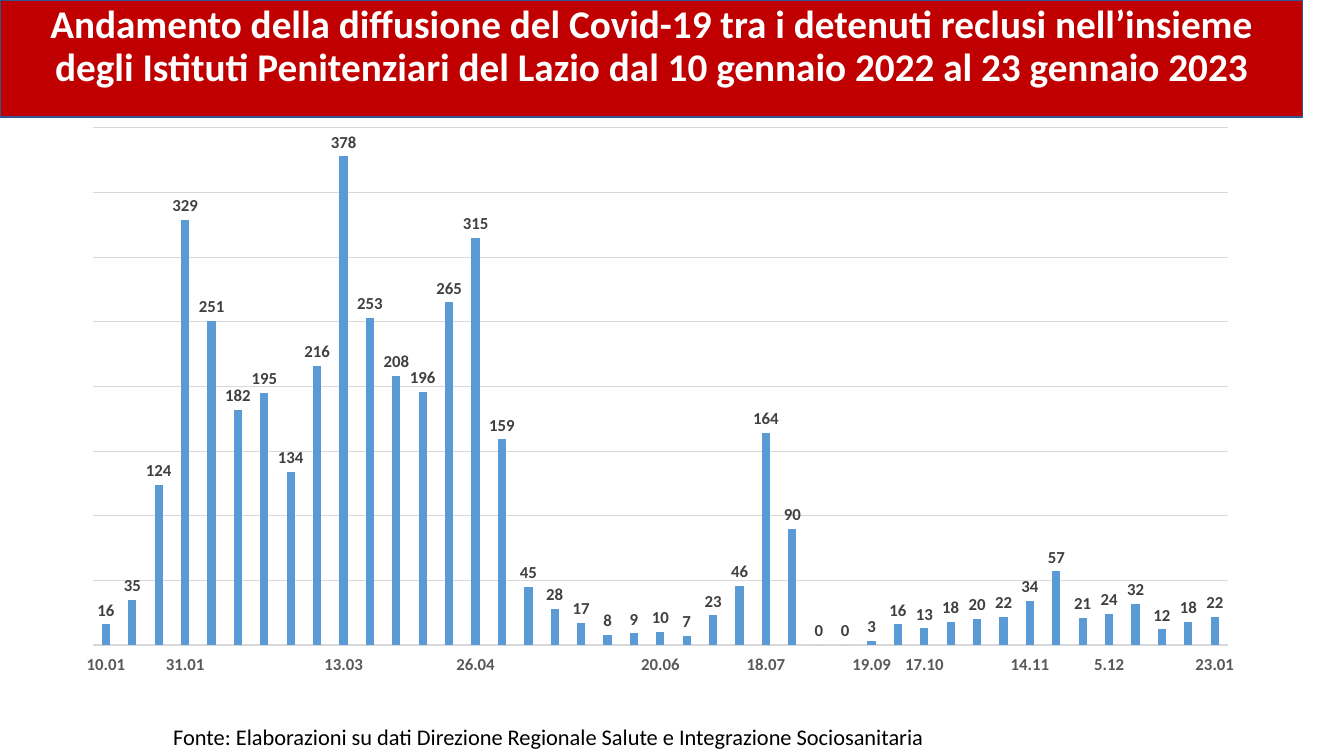
from dataclasses import dataclass

from lxml import etree
from pptx import Presentation
from pptx.chart.data import CategoryChartData
from pptx.dml.color import RGBColor
from pptx.enum.chart import XL_CHART_TYPE, XL_LABEL_POSITION, XL_TICK_LABEL_POSITION, XL_TICK_MARK
from pptx.enum.shapes import MSO_SHAPE
from pptx.enum.text import MSO_ANCHOR, MSO_AUTO_SIZE, PP_ALIGN
from pptx.oxml.ns import qn
from pptx.util import Inches, Pt

COLUMNS = XL_CHART_TYPE.COLUMN_CLUSTERED
OUTSIDE_END = XL_LABEL_POSITION.OUTSIDE_END
LABELS_LOW = XL_TICK_LABEL_POSITION.LOW
NO_TICK = XL_TICK_MARK.NONE
FONT = "Calibri"
GRID_COLOR = "D9D9D9"

TITLE = ("Andamento della diffusione del Covid-19 tra i detenuti reclusi nell’insieme "
         "degli Istituti Penitenziari del Lazio dal 10 gennaio 2022 al 23 gennaio 2023")
SOURCE = "Fonte: Elaborazioni su dati Direzione Regionale Salute e Integrazione Sociosanitaria"
CASES = [16, 35, 124, 329, 251, 182, 195, 134, 216, 378, 253, 208, 196, 265, 315,
         159, 45, 28, 17, 8, 9, 10, 7, 23, 46, 164, 90, 0, 0, 3, 16, 13, 18, 20, 22,
         34, 57, 21, 24, 32, 12, 18, 22]
# Only some surveys carry a date: position in CASES -> label
DATES = {0: "10.01", 3: "31.01", 9: "13.03", 14: "26.04", 21: "20.06", 25: "18.07",
         29: "19.09", 31: "17.10", 35: "14.11", 38: "5.12", 42: "23.01"}


@dataclass
class Box:
    left: float
    top: float
    width: float
    height: float

    def lengths(self) -> tuple:
        return tuple(Inches(n) for n in (self.left, self.top, self.width, self.height))


@dataclass
class TextStyle:
    size: float
    color: str
    bold: bool = False


TITLE_BOX = Box(0, 0, 12.92, 1.16)
CHART_BOX = Box(0.62, 1.16, 11.86, 5.59)
PLOT_BOX = Box(0.92, 1.27, 11.26, 5.13)
SOURCE_BOX = Box(1.62, 7.13, 7.84, 0.37)


def rgb(color: str) -> RGBColor:
    return RGBColor.from_string(color)


def style_font(font, style: TextStyle) -> None:
    font.name = FONT
    font.size = Pt(style.size)
    font.bold = style.bold
    font.color.rgb = rgb(style.color)


def style_line(line, color: str, width: float) -> None:
    line.color.rgb = rgb(color)
    line.width = Pt(width)


def add_run(paragraph, text: str, style: TextStyle) -> None:
    run = paragraph.add_run()
    run.text = text
    style_font(run.font, style)


def add_title(slide) -> None:
    shape = slide.shapes.add_shape(MSO_SHAPE.RECTANGLE, *TITLE_BOX.lengths())
    shape.shadow.inherit = False
    shape.fill.solid()
    shape.fill.fore_color.rgb = rgb("C00000")
    style_line(shape.line, "325491", 1)
    shape.text_frame.word_wrap = True
    shape.text_frame.vertical_anchor = MSO_ANCHOR.TOP
    paragraph = shape.text_frame.paragraphs[0]
    paragraph.alignment = PP_ALIGN.CENTER
    paragraph.line_spacing = 0.9
    add_run(paragraph, TITLE, TextStyle(28, "FFFFFF", True))


def add_source(slide) -> None:
    text_frame = slide.shapes.add_textbox(*SOURCE_BOX.lengths()).text_frame
    text_frame.word_wrap = False
    text_frame.auto_size = MSO_AUTO_SIZE.SHAPE_TO_FIT_TEXT
    add_run(text_frame.paragraphs[0], SOURCE, TextStyle(16, "000000"))


def place_plot(chart) -> None:
    """Fix the inner plot area as fractions of the chart frame."""
    plot_area = chart.plots[0]._element.getparent()
    for old_layout in plot_area.findall(qn("c:layout")):
        plot_area.remove(old_layout)
    layout = etree.Element(qn("c:layout"))
    manual = etree.SubElement(layout, qn("c:manualLayout"))
    settings = {
        "layoutTarget": "inner", "xMode": "edge", "yMode": "edge",
        "x": (PLOT_BOX.left - CHART_BOX.left) / CHART_BOX.width,
        "y": (PLOT_BOX.top - CHART_BOX.top) / CHART_BOX.height,
        "w": PLOT_BOX.width / CHART_BOX.width,
        "h": PLOT_BOX.height / CHART_BOX.height,
    }
    for name, value in settings.items():
        etree.SubElement(manual, qn(f"c:{name}")).set("val", str(value))
    plot_area.insert(0, layout)


def style_axes(chart) -> None:
    dates = chart.category_axis
    dates.major_tick_mark = dates.minor_tick_mark = NO_TICK
    dates.tick_label_position = LABELS_LOW
    style_line(dates.format.line, GRID_COLOR, 0.75)
    style_font(dates.tick_labels.font, TextStyle(12, "595959", True))
    # Show every label, horizontally
    axis = dates._element
    axis.find(f"{qn('c:txPr')}/{qn('a:bodyPr')}").set("rot", "-60000000")
    skip = etree.Element(qn("c:tickLblSkip"))
    skip.set("val", "1")
    axis.find(qn("c:noMultiLvlLbl")).addprevious(skip)

    counts = chart.value_axis
    counts.visible = False
    counts.minimum_scale, counts.maximum_scale, counts.major_unit = 0, 400, 50
    counts.has_major_gridlines = True
    style_line(counts.major_gridlines.format.line, GRID_COLOR, 0.75)


def add_cases_chart(slide) -> None:
    data = CategoryChartData()
    data.categories = [DATES.get(index, "") for index in range(len(CASES))]
    data.add_series("Series 1", CASES)
    chart = slide.shapes.add_chart(COLUMNS, *CHART_BOX.lengths(), data).chart
    chart.has_title = False
    chart.has_legend = False
    style_font(chart.font, TextStyle(12, "000000", True))
    place_plot(chart)
    style_axes(chart)

    # Columns and their values
    plot = chart.plots[0]
    plot.vary_by_categories = False
    plot.gap_width = 219
    plot.overlap = -27
    series = plot.series[0]
    series.invert_if_negative = False
    series.format.fill.solid()
    series.format.fill.fore_color.rgb = rgb("5B9BD5")
    labels = series.data_labels
    labels.show_value = True
    labels.position = OUTSIDE_END
    style_font(labels.font, TextStyle(12, "404040", True))


def main() -> None:
    presentation = Presentation()
    presentation.slide_width = Inches(13.33)
    presentation.slide_height = Inches(7.5)
    slide = presentation.slides.add_slide(presentation.slide_layouts[6])
    add_title(slide)
    add_source(slide)
    add_cases_chart(slide)
    presentation.save("out.pptx")


if __name__ == "__main__":
    main()
